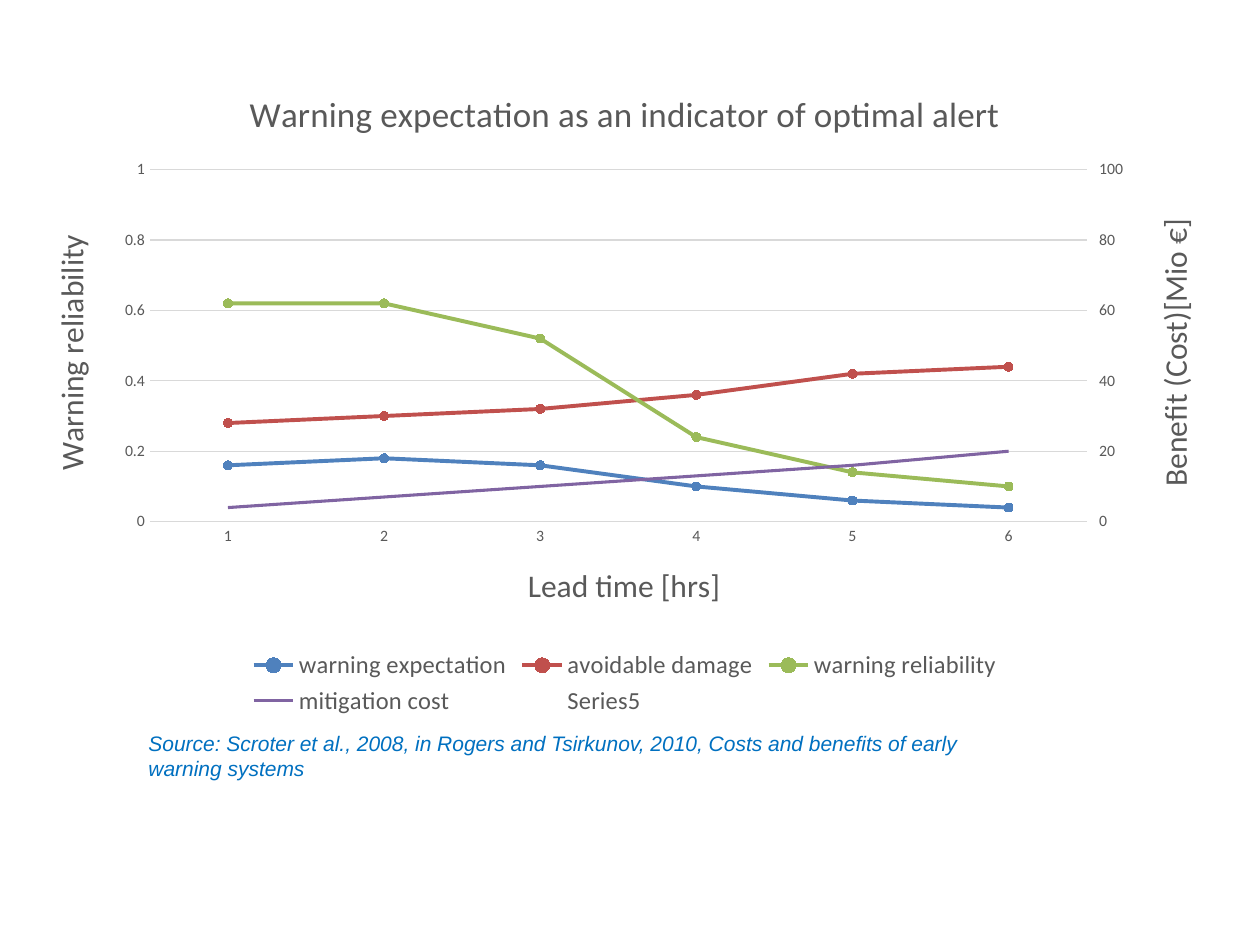
"""Build a slide with a two-axis line chart of flood warning expectation and its source."""
import copy
import pptx
import pptx.chart.axis
import pptx.chart.data
import pptx.dml.color
import pptx.enum.chart
import pptx.enum.text
import pptx.oxml.ns
import pptx.util

Pt = pptx.util.Pt
qn = pptx.oxml.ns.qn
rgb = pptx.dml.color.RGBColor.from_string

THEME = {
    "text": rgb("595959"),
    "grid": rgb("D9D9D9"),
    "source": rgb("0070C0"),
    "chart_font": "Calibri",
    "source_font": "Arial",
    "title_size": Pt(20),
    "axis_title_size": Pt(18),
    "legend_size": Pt(14),
    "source_size": Pt(12),
    "base_size": Pt(10),
    "tick_size": Pt(9),
}


def style_font(font, size):
    font.name = THEME["chart_font"]
    font.size = size
    font.bold = False
    font.color.rgb = THEME["text"]


def set_title(owner_title, text, size):
    owner_title.text_frame.text = text
    style_font(owner_title.text_frame.paragraphs[0].font, size)


presentation = pptx.Presentation()
presentation.slide_width = Pt(720)
presentation.slide_height = Pt(540)
slide = presentation.slides.add_slide(presentation.slide_layouts[6])

measures = [
    ("warning expectation", (0.16, 0.18, 0.16, 0.1, 0.06, 0.04), "4F81BD", 2.25, True),
    ("avoidable damage", (0.28, 0.3, 0.32, 0.36, 0.42, 0.44), "C0504D", 2.25, True),
    ("warning reliability", (0.62, 0.62, 0.52, 0.24, 0.14, 0.1), "9BBB59", 2.25, True),
    ("mitigation cost", (0.04, 0.07, 0.1, 0.13, 0.16, 0.2), "8064A2", 1.75, False),
    ("Series5", (0, 0, 0, 0, 0, 0), None, 0, False),
]
lead_times = pptx.chart.data.CategoryChartData()
lead_times.categories = ["1", "2", "3", "4", "5", "6"]
for name, values, *_ in measures:
    lead_times.add_series(name, values)

chart = slide.shapes.add_chart(
    pptx.enum.chart.XL_CHART_TYPE.LINE_MARKERS,
    Pt(12.24), Pt(36), Pt(689.76), Pt(375.84), lead_times,
).chart
style_font(chart.font, THEME["base_size"])
chart.has_title = True
set_title(chart.chart_title, "Warning expectation as an indicator of optimal alert", THEME["title_size"])
chart.chart_title.include_text_in_layout = False
chart.has_legend = True
chart.legend.position = pptx.enum.chart.XL_LEGEND_POSITION.BOTTOM
chart.legend.include_in_layout = False
style_font(chart.legend.font, THEME["legend_size"])
chart.plots[0].vary_by_categories = False

for series, (_, _, color, width, marked) in zip(chart.plots[0].series, measures):
    series.smooth = False
    series.marker.style = pptx.enum.chart.XL_MARKER_STYLE.NONE
    if color is None:
        series.format.line.fill.background()
        continue
    series.format.line.color.rgb = rgb(color)
    series.format.line.width = Pt(width)
    if marked:
        series.marker.style = pptx.enum.chart.XL_MARKER_STYLE.CIRCLE
        series.marker.size = 5
        series.marker.format.fill.solid()
        series.marker.format.fill.fore_color.rgb = rgb(color)
        series.marker.format.line.color.rgb = rgb(color)

lead_axis, reliability_axis = chart.category_axis, chart.value_axis
for axis, label in ((lead_axis, "Lead time [hrs]"), (reliability_axis, "Warning reliability")):
    set_title(axis.axis_title, label, THEME["axis_title_size"])
    style_font(axis.tick_labels.font, THEME["tick_size"])
    axis.major_tick_mark = pptx.enum.chart.XL_TICK_MARK.NONE
    axis.minor_tick_mark = pptx.enum.chart.XL_TICK_MARK.NONE
lead_axis.format.line.color.rgb = THEME["grid"]
lead_axis.format.line.width = Pt(0.75)
reliability_axis.format.line.fill.background()
reliability_axis.major_gridlines.format.line.color.rgb = THEME["grid"]
reliability_axis.major_gridlines.format.line.width = Pt(0.75)
reliability_axis.minimum_scale = 0
reliability_axis.maximum_scale = 1
reliability_axis.major_unit = 0.2

plot_area = chart.element.find(".//" + qn("c:plotArea"))
left_lines = plot_area.find(qn("c:lineChart"))
category_xml = plot_area.find(qn("c:catAx"))
value_xml = plot_area.find(qn("c:valAx"))
value_xml.find(".//" + qn("a:bodyPr")).set("rot", "-5400000")

right_lines = copy.deepcopy(left_lines)
right_category_xml = copy.deepcopy(category_xml)
right_value_xml = copy.deepcopy(value_xml)
for measure in right_lines.findall(qn("c:ser"))[:-1]:
    right_lines.remove(measure)
left_lines.remove(left_lines.findall(qn("c:ser"))[-1])
left_lines.addnext(right_lines)
value_xml.addnext(right_category_xml)
right_category_xml.addnext(right_value_xml)

category_id, value_id = "50010", "50020"
for reference, axis_id in zip(right_lines.findall(qn("c:axId")), (category_id, value_id)):
    reference.set("val", axis_id)
for axis_xml, own_id, cross_id in (
    (right_category_xml, category_id, value_id),
    (right_value_xml, value_id, category_id),
):
    axis_xml.find(qn("c:axId")).set("val", own_id)
    axis_xml.find(qn("c:crossAx")).set("val", cross_id)
right_value_xml.find(qn("c:axPos")).set("val", "r")
right_value_xml.find(qn("c:crosses")).set("val", "max")

hidden_axis = pptx.chart.axis.CategoryAxis(right_category_xml)
hidden_axis.has_title = False
hidden_axis.visible = False
benefit_axis = pptx.chart.axis.ValueAxis(right_value_xml)
benefit_axis.has_major_gridlines = False
benefit_axis.maximum_scale = 100
benefit_axis.major_unit = 20
benefit_axis.major_tick_mark = pptx.enum.chart.XL_TICK_MARK.OUTSIDE
benefit_axis.axis_title.text_frame.paragraphs[0].runs[0].text = "Benefit (Cost)[Mio €]"

source = slide.shapes.add_textbox(Pt(77.76), Pt(414), Pt(516.24), Pt(99.36)).text_frame
source.word_wrap = True
source.auto_size = pptx.enum.text.MSO_AUTO_SIZE.NONE
citation = source.paragraphs[0]
citation.text = (
    "Source: Scroter et al., 2008, in Rogers and Tsirkunov, 2010, "
    "Costs and benefits of early warning systems"
)
citation.font.name = THEME["source_font"]
citation.font.size = THEME["source_size"]
citation.font.italic = True
citation.font.color.rgb = THEME["source"]

presentation.save("out.pptx")
